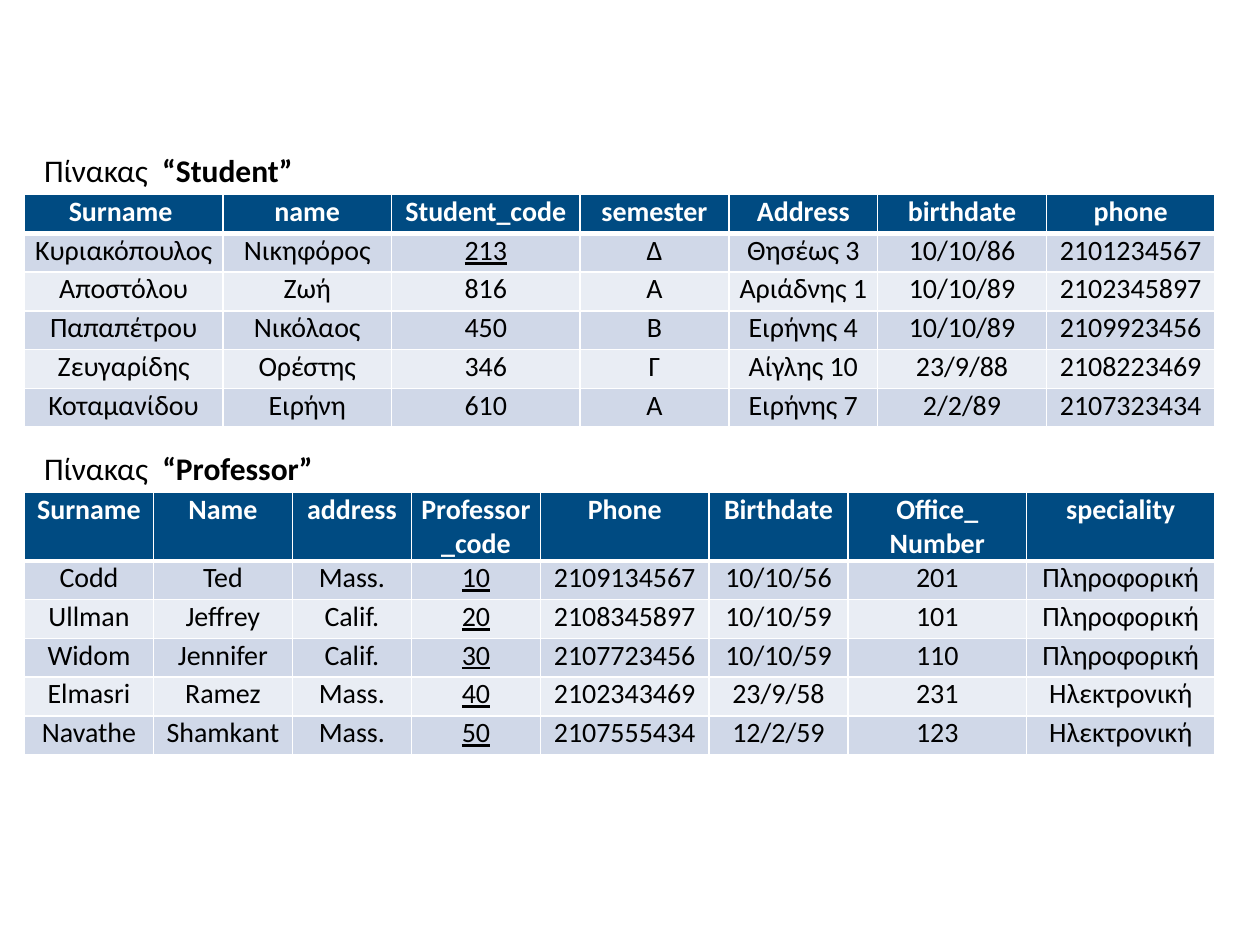
from lxml.etree import SubElement
from pptx import Presentation
from pptx.dml.color import RGBColor
from pptx.enum.text import PP_ALIGN
from pptx.oxml.ns import qn
from pptx.util import Pt

STUDENT = {
    "name": "Student",
    "caption_top": 82.8,
    "caption_width": 162.7,
    "top": 111.3,
    "header_height": 22.15,
    "column_units": (20, 17, 19, 15, 15, 17, 17),
    "underlined": {"213"},
    "rows": [
        ("Surname ", "name", "Student_code", "semester", "Address", "birthdate", "phone"),
        ("Κυριακόπουλος", "Νικηφόρος", "213", "Δ", "Θησέως 3", "10/10/86", "2101234567"),
        ("Αποστόλου", "Ζωή", "816", "Α", "Αριάδνης 1", "10/10/89", "2102345897"),
        ("Παπαπέτρου", "Νικόλαος", "450", "Β", "Ειρήνης 4", "10/10/89", "2109923456"),
        ("Ζευγαρίδης", "Ορέστης", "346", "Γ", "Αίγλης 10", "23/9/88", "2108223469"),
        ("Κοταμανίδου", "Ειρήνη", "610", "Α", "Ειρήνης 7", "2/2/89", "2107323434"),
    ],
}
PROFESSOR = {
    "name": "Professor",
    "caption_top": 252.8,
    "caption_width": 174.2,
    "top": 281.5,
    "header_height": 39,
    "column_units": (13, 14, 12, 13, 17, 14, 18, 19),
    "underlined": {"10", "20", "30", "40", "50"},
    "rows": [
        ("Surname", "Name", "address", "Professor_code", "Phone", "Birthdate",
         "Office_\nNumber", "speciality"),
        ("Codd", "Ted", "Mass.", "10", "2109134567", "10/10/56", "201", "Πληροφορική"),
        ("Ullman", "Jeffrey", "Calif.", "20", "2108345897", "10/10/59", "101", "Πληροφορική"),
        ("Widom", "Jennifer", "Calif.", "30", "2107723456", "10/10/59", "110", "Πληροφορική"),
        ("Elmasri", "Ramez", "Mass.", "40", "2102343469", "23/9/58", "231", "Ηλεκτρονική"),
        ("Navathe", "Shamkant", "Mass.", "50", "2107555434", "12/2/59", "123", "Ηλεκτρονική"),
    ],
}

FONT = "Calibri"
WHITE, BLACK, HEADER_FILL = "FFFFFF", "000000", "004B82"
BAND_FILLS = ("E9EDF4", "D0D8E8")
LEFT = 14
COLUMN_UNIT = 5.67
ROW_HEIGHT = 22.15
CELL_INSET = 5.4


def color(hex_code):
    return RGBColor.from_string(hex_code)


def set_font(font, size, hex_code):
    font.name = FONT
    font.size = Pt(size)
    font.color.rgb = color(hex_code)


def set_borders(cell, row_index):
    """Draw thin white borders, with a thick one below the header row."""
    widths = {"L": 1, "R": 1, "T": 3 if row_index == 1 else 1, "B": 3 if row_index == 0 else 1}
    properties = cell._tc.get_or_add_tcPr()
    for side, width in widths.items():
        line = SubElement(properties, qn(f"a:ln{side}"), w=str(Pt(width)))
        fill = SubElement(line, qn("a:solidFill"))
        SubElement(fill, qn("a:srgbClr"), val=WHITE)


def fill_cell(cell, text, row_index, underlined):
    is_header = row_index == 0
    set_borders(cell, row_index)
    cell.fill.solid()
    cell.fill.fore_color.rgb = color(HEADER_FILL if is_header else BAND_FILLS[row_index % 2])
    cell.margin_left = cell.margin_right = Pt(CELL_INSET)
    cell.margin_top = cell.margin_bottom = 0
    cell.text = text
    for para in cell.text_frame.paragraphs:
        para.alignment = PP_ALIGN.CENTER
        set_font(para.font, 16, WHITE if is_header else BLACK)
        para.font.bold = is_header
        para.font.underline = underlined


def add_relation(slide, relation):
    rows, units = relation["rows"], relation["column_units"]
    heights = [relation["header_height"]] + [ROW_HEIGHT] * (len(rows) - 1)
    table = slide.shapes.add_table(
        len(rows), len(units), Pt(LEFT), Pt(relation["top"]),
        Pt(sum(units) * COLUMN_UNIT), Pt(sum(heights))).table
    for column, unit in zip(table.columns, units):
        column.width = Pt(unit * COLUMN_UNIT)
    for row_index, (row, height) in enumerate(zip(rows, heights)):
        table.rows[row_index].height = Pt(height)
        for column_index, text in enumerate(row):
            fill_cell(table.cell(row_index, column_index), text, row_index,
                      text in relation["underlined"])


def add_caption(slide, relation):
    box = slide.shapes.add_textbox(
        Pt(LEFT), Pt(relation["caption_top"]), Pt(relation["caption_width"]), Pt(28.8))
    box.text_frame.word_wrap = True
    box.text_frame.margin_left = Pt(11.2)
    para = box.text_frame.paragraphs[0]
    set_font(para.font, 18, BLACK)
    para.add_run().text = "Πίνακας  "
    span = para.add_run()
    span.text = f"“{relation['name']}”"
    span.font.bold = True


def main():
    deck = Presentation()
    deck.slide_width, deck.slide_height = Pt(720), Pt(540)
    slide = deck.slides.add_slide(deck.slide_layouts.get_by_name("Blank"))
    for relation in (STUDENT, PROFESSOR):
        add_relation(slide, relation)
        add_caption(slide, relation)
    deck.save("out.pptx")


if __name__ == "__main__":
    main()
